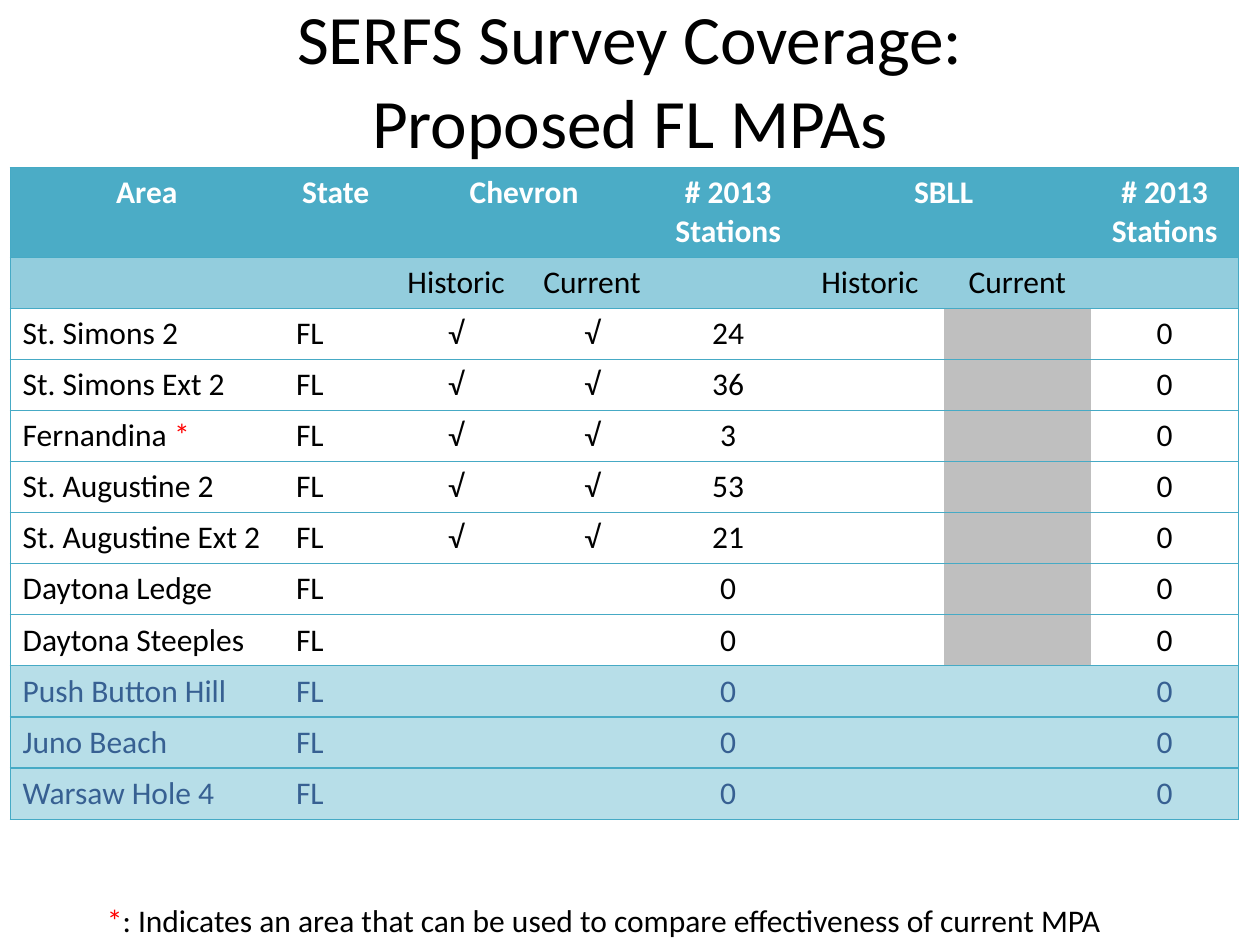
from dataclasses import dataclass

from lxml.etree import SubElement
from pptx import Presentation
from pptx.dml.color import RGBColor
from pptx.enum.text import MSO_ANCHOR, MSO_AUTO_SIZE, PP_ALIGN
from pptx.oxml.ns import qn
from pptx.slide import Slide
from pptx.table import Table, _Cell
from pptx.text.text import _Paragraph
from pptx.util import Inches, Pt

COLORS = {
    "black": "000000", "white": "FFFFFF", "red": "FF0000", "blue": "376092",
    "header": "4BACC6", "subheader": "93CDDD", "highlight": "B7DEE8",
    "gray": "BFBFBF", "border": "46AAC5",
}
FONT_NAME = "Calibri"
MARK = "*"
PLAIN_GRID_STYLE = "{2D5ABB26-0587-4C30-8999-92F81FD0307C}"
COLUMN_WIDTHS = [2.17, 0.83, 1.17, 1, 1.17, 1.17, 1.17, 1.17]
# The Chevron column pair shares its width with the station column
COLUMN_WIDTHS[2:5] = [1.08, 1.08, 1.08]
HEADER_HEIGHT, ROW_HEIGHT = 0.7, 0.4
SURVEY_CURRENT_COLUMN = 6
HEADERS = ["Area", "State", "Chevron", "", "# 2013 Stations", "SBLL", "", "# 2013 Stations"]
SUBHEADERS = ["", "", "Historic", "Current", "", "Historic", "Current", ""]


@dataclass(frozen=True)
class Area:
    name: str
    stations: int
    sampled: bool = False
    highlighted: bool = False

    def values(self) -> list[str]:
        check = "√" if self.sampled else ""
        return [self.name, "FL", check, check, str(self.stations), "", "", "0"]


@dataclass(frozen=True)
class RowStyle:
    fill: str
    text: str
    bold: bool = False
    centered: bool = False
    gray_current: bool = False


AREAS = [
    Area("St. Simons 2", 24, sampled=True),
    Area("St. Simons Ext 2", 36, sampled=True),
    Area("Fernandina *", 3, sampled=True),
    Area("St. Augustine 2", 53, sampled=True),
    Area("St. Augustine Ext 2", 21, sampled=True),
    Area("Daytona Ledge", 0),
    Area("Daytona Steeples", 0),
    Area("Push Button Hill", 0, highlighted=True),
    Area("Juno Beach", 0, highlighted=True),
    Area("Warsaw Hole 4", 0, highlighted=True),
]
HEADER_STYLE = RowStyle("header", "white", bold=True, centered=True)
SUBHEADER_STYLE = RowStyle("subheader", "black", centered=True)
AREA_STYLE = RowStyle("white", "black", gray_current=True)
HIGHLIGHT_STYLE = RowStyle("highlight", "blue")


def rgb(color: str) -> RGBColor:
    return RGBColor.from_string(COLORS[color])


def add_run(paragraph: _Paragraph, text: str, color: str, size: float = 18,
            bold: bool = False) -> None:
    run = paragraph.add_run()
    run.text = text
    font_values = {"name": FONT_NAME, "size": Pt(size), "bold": bold}
    for attribute, value in font_values.items():
        setattr(run.font, attribute, value)
    run.font.color.rgb = rgb(color)


def write_marked(paragraph: _Paragraph, text: str, color: str, bold: bool = False) -> None:
    """Write text with the footnote mark in red."""
    before, mark, after = text.partition(MARK)
    for part, part_color in ((before, color), (mark, "red"), (after, color)):
        if part:
            add_run(paragraph, part, part_color, bold=bold)


def set_borders(cell: _Cell, sides: str) -> None:
    """Draw the sides given by letter, kept in the order the schema needs."""
    properties = cell._tc.get_or_add_tcPr()
    for index, side in enumerate(side for side in "LRTB" if side in sides):
        line = SubElement(properties, qn(f"a:ln{side}"), w=str(Pt(0.75)))
        fill = SubElement(line, qn("a:solidFill"))
        SubElement(fill, qn("a:srgbClr"), val=COLORS["border"])
        properties.insert(index, line)


def fill_row(table: Table, row: int, values: list[str], style: RowStyle) -> None:
    last_column = len(values) - 1
    for column, value in enumerate(values):
        cell = table.cell(row, column)
        gray = style.gray_current and column == SURVEY_CURRENT_COLUMN
        cell.fill.solid()
        cell.fill.fore_color.rgb = rgb("gray" if gray else style.fill)
        sides = "TB" + ("L" if column == 0 else "") + ("R" if column == last_column else "")
        set_borders(cell, sides)
        paragraph = cell.text_frame.paragraphs[0]
        paragraph.font.size = Pt(18)
        if style.centered or column > 1:
            paragraph.alignment = PP_ALIGN.CENTER
        write_marked(paragraph, value, style.text, style.bold)


def add_coverage_table(slide: Slide) -> None:
    rows = [(HEADERS, HEADER_STYLE), (SUBHEADERS, SUBHEADER_STYLE)]
    rows += [(area.values(), HIGHLIGHT_STYLE if area.highlighted else AREA_STYLE)
             for area in AREAS]
    height = HEADER_HEIGHT + ROW_HEIGHT * (len(rows) - 1)
    table = slide.shapes.add_table(
        len(rows), len(COLUMN_WIDTHS), Inches(0.08), Inches(1.33),
        Inches(sum(COLUMN_WIDTHS)), Inches(height)).table
    table._tbl.tblPr.find(qn("a:tableStyleId")).text = PLAIN_GRID_STYLE
    table.horz_banding = False
    for column, width in zip(table.columns, COLUMN_WIDTHS):
        column.width = Inches(width)
    for index, (values, style) in enumerate(rows):
        table.rows[index].height = Inches(ROW_HEIGHT if index else HEADER_HEIGHT)
        fill_row(table, index, values, style)
    for column in (2, 5):
        table.cell(0, column).merge(table.cell(0, column + 1))


def add_title(slide: Slide) -> None:
    title = slide.shapes.title
    position = {"left": 0.5, "top": 0, "width": 9, "height": 1.25}
    for attribute, value in position.items():
        setattr(title, attribute, Inches(value))
    frame = title.text_frame
    frame.auto_size = MSO_AUTO_SIZE.NONE
    frame.vertical_anchor = MSO_ANCHOR.MIDDLE
    paragraph = frame.paragraphs[0]
    paragraph.alignment = PP_ALIGN.CENTER
    add_run(paragraph, "SERFS Survey Coverage:", "black", 39.6)
    paragraph.add_line_break()
    add_run(paragraph, "Proposed FL MPAs", "black", 39.6)


def add_footnote(slide: Slide) -> None:
    box = slide.shapes.add_textbox(Inches(0.75), Inches(7.1), Inches(8.83), Inches(0.4))
    box.text_frame.word_wrap = True
    write_marked(
        box.text_frame.paragraphs[0],
        "*: Indicates an area that can be used to compare effectiveness of current MPA",
        "black")


def main() -> None:
    presentation = Presentation()
    presentation.slide_width = Inches(10)
    presentation.slide_height = Inches(7.5)
    slide = presentation.slides.add_slide(presentation.slide_layouts[5])
    add_title(slide)
    add_coverage_table(slide)
    add_footnote(slide)
    presentation.save("out.pptx")


if __name__ == "__main__":
    main()
